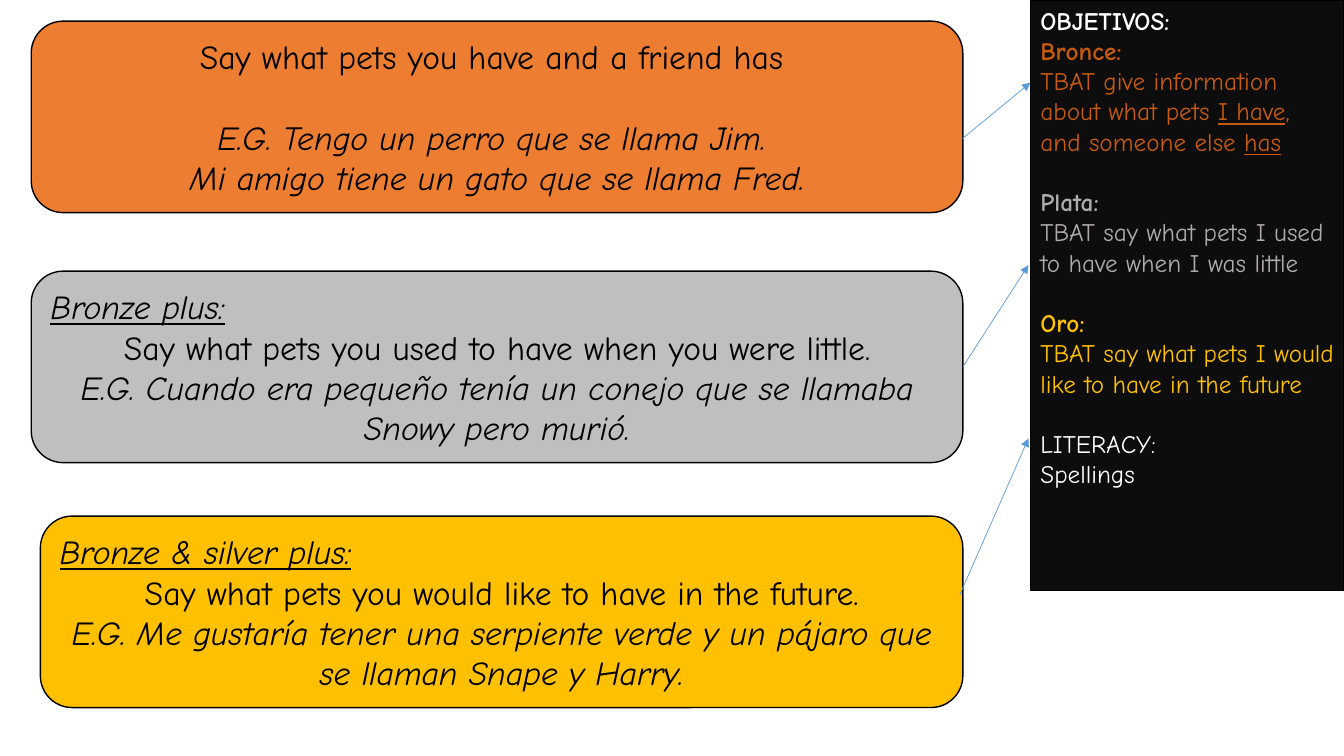
import pptx
import pptx.util
import pptx.dml.color
import pptx.enum.shapes
import pptx.enum.text
import pptx.oxml.ns
import lxml.etree

Inches = pptx.util.Inches
Pt = pptx.util.Pt
MSO_SHAPE = pptx.enum.shapes.MSO_SHAPE
PP_ALIGN = pptx.enum.text.PP_ALIGN
MSO_ANCHOR = pptx.enum.text.MSO_ANCHOR
qn = pptx.oxml.ns.qn


def rgb(value):
    return pptx.dml.color.RGBColor.from_string(value)


def add_panel(kind, box, fill, anchor, size, paragraphs):
    sp = s.shapes.add_shape(kind, *[Inches(v) for v in box])
    sp.shadow.inherit = False
    sp.fill.solid()
    sp.fill.fore_color.rgb = rgb(fill)
    sp.line.color.rgb = rgb("000000")
    sp.line.width = Pt(1)
    tf = sp.text_frame
    tf.word_wrap = True
    tf.auto_size = pptx.enum.text.MSO_AUTO_SIZE.SHAPE_TO_FIT_TEXT
    tf.vertical_anchor = anchor
    for i, (align, gap, color, runs) in enumerate(paragraphs):
        p = tf.paragraphs[0] if i == 0 else tf.add_paragraph()
        p.alignment = align
        p.space_before = Pt(gap)
        for text, style in runs:
            r = p.add_run()
            r.text = text
            r.font.color.rgb = rgb(color)
            formats = {"name": "Comic Neue", "size": Pt(size), **style}
            for name, value in formats.items():
                setattr(r.font, name, value)
    return sp


prs = pptx.Presentation()
prs.slide_width = Inches(13.33)
prs.slide_height = Inches(7.5)
s = prs.slides.add_slide(prs.slide_layouts[6])

LEFT, CENTER = PP_ALIGN.LEFT, PP_ALIGN.CENTER
plain, bold = {}, {"bold": True}
italic, underline = {"italic": True}, {"underline": True}
heading = {**italic, **underline}

tasks = [
    (0.31, 0.21, "ED7D31", [
        (CENTER, 0, "Say what pets you have and a friend has ", plain),
        (CENTER, 28.8, "E.G. Tengo un perro que se llama Jim. ", italic),
        (CENTER, 0, "Mi amigo tiene un gato que se llama Fred.", italic),
    ]),
    (0.31, 2.69, "BFBFBF", [
        (LEFT, 0, "Bronze plus:", heading),
        (CENTER, 0, "Say what pets you used to have when you were little.", plain),
        (CENTER, 0, "E.G. Cuando era pequeño tenía un conejo que se llamaba Snowy pero murió.", italic),
    ]),
    (0.4, 5.12, "FFC000", [
        (LEFT, 0, "Bronze & silver plus:", heading),
        (CENTER, 0, "Say what pets you would like to have in the future.", plain),
        (CENTER, 0, "E.G. Me gustaría tener una serpiente verde y un pájaro que se llaman Snape y Harry.", italic),
    ]),
]
panels = []
for left, top, fill, lines in tasks:
    paragraphs = [(align, gap, "000000", [(text, style)]) for align, gap, text, style in lines]
    box = (left, top, 9.55 - left, 1.9)
    panels.append(add_panel(MSO_SHAPE.ROUNDED_RECTANGLE, box, fill, MSO_ANCHOR.MIDDLE, 24, paragraphs))

arrows = [
    (9.54, 1.38, 10.22, 0.82),
    (9.55, 3.64, 10.2, 2.63),
    (9.52, 5.9, 10.2, 4.35),
]
connectors = []
for ends in arrows:
    c = s.shapes.add_connector(pptx.enum.shapes.MSO_CONNECTOR.STRAIGHT, *[Inches(v) for v in ends])
    c.line.color.rgb = rgb("5B9BD5")
    c.line.width = Pt(0.5)
    lxml.etree.SubElement(c.line._get_or_add_ln(), qn("a:tailEnd"), type="triangle")
    lxml.etree.SubElement(c._element.spPr, qn("a:effectLst"))
    connectors.append(c)
connectors[1].begin_connect(panels[1], 3)

objectives = [
    (0, "FFFFFF", [("OBJETIVOS:", bold)]),
    (0, "C55A11", [("Bronce:", bold)]),
    (0, "C55A11", [
        ("TBAT give information about what pets ", plain),
        ("I have", underline),
        (", and someone else ", plain),
        ("has", underline),
    ]),
    (21.6, "AFABAB", [("Plata:", bold)]),
    (0, "AFABAB", [("TBAT say what pets I used to have when I was little", plain)]),
    (21.6, "FFC000", [("Oro:", bold)]),
    (0, "FFC000", [("TBAT say what pets I would like to have in the future", plain)]),
    (21.6, "FFFFFF", [("LITERACY:", plain)]),
    (0, "FFFFFF", [("Spellings", plain)]),
]
add_panel(MSO_SHAPE.RECTANGLE, (10.22, 0, 3.11, 5.86), "0D0D0D", MSO_ANCHOR.TOP, 18,
          [(LEFT, *line) for line in objectives])

prs.save("out.pptx")
